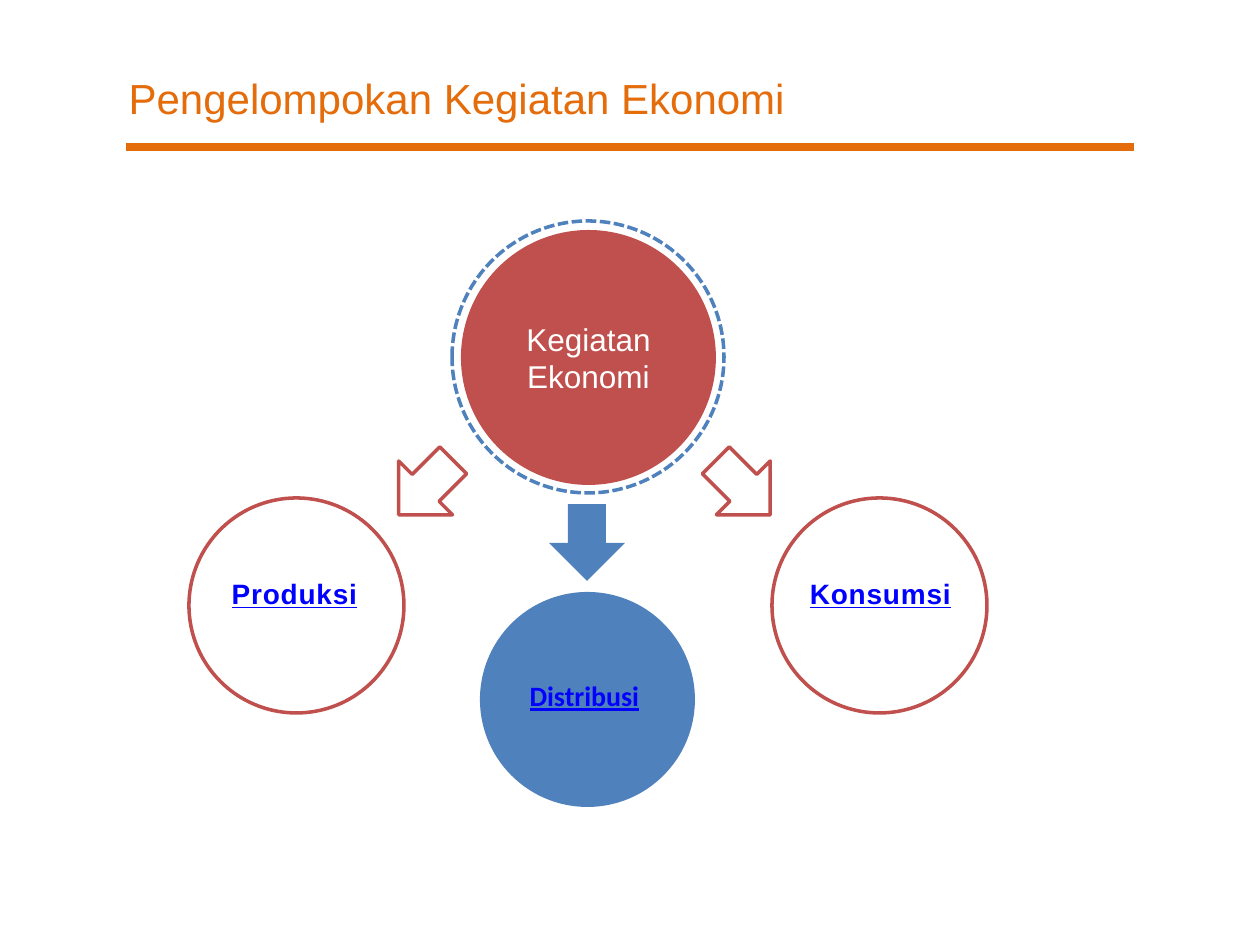
from dataclasses import dataclass

from lxml.etree import SubElement
from pptx import Presentation
from pptx.dml.color import RGBColor
from pptx.enum.dml import MSO_LINE
from pptx.enum.shapes import MSO_CONNECTOR, MSO_SHAPE
from pptx.enum.text import MSO_ANCHOR as ANCHOR, MSO_AUTO_SIZE as AUTO, PP_ALIGN as ALIGN
from pptx.oxml.ns import qn
from pptx.util import Emu, Pt


@dataclass(frozen=True)
class Theme:
    orange: str = "E46C0A"
    red: str = "C0504D"
    blue: str = "4F81BD"
    link: str = "0000FF"
    white: str = "FFFFFF"
    font: str = "Arial"
    alt_font: str = "Calibri"
    title: int = 24
    hub: int = 18
    label: int = 16
    outline: float = 2
    rule: float = 4.5


def px(n):
    return Emu(round(n * 914400 / 126))


def rgb(color):
    return RGBColor.from_string(color)


def write(tf, text, *, size, color, font, align=ALIGN.CENTER, anchor=ANCHOR.MIDDLE,
          bold=False, underline=False, spacing=0):
    tf.word_wrap = True
    tf.vertical_anchor = anchor
    p = tf.paragraphs[0]
    p.alignment = align
    r = p.add_run()
    r.text = text
    r.font.name = font
    r.font.size = Pt(size)
    r.font.bold = bold
    r.font.underline = underline
    r.font.color.rgb = rgb(color)
    if spacing:
        r._r.get_or_add_rPr().set("spc", str(round(spacing * 100)))


class Deck:
    def __init__(self, theme):
        self.theme = theme
        self.prs = Presentation()
        self.prs.slide_width, self.prs.slide_height = px(1260), px(945)
        self.s = self.prs.slides.add_slide(self.prs.slide_layouts[5])

    def title(self, text, x, y, w, h):
        sp = self.s.shapes.title
        sp.left, sp.top, sp.width, sp.height = map(px, (x, y, w, h))
        t = self.theme
        write(sp.text_frame, text, size=t.title, color=t.orange, font=t.font, align=ALIGN.LEFT)

    def rule(self, x1, x2, y):
        ln = self.s.shapes.add_connector(MSO_CONNECTOR.STRAIGHT, px(x1), px(y), px(x2), px(y))
        ln.line.color.rgb = rgb(self.theme.orange)
        ln.line.width = Pt(self.theme.rule)
        SubElement(ln._element.spPr, qn("a:effectLst"))

    def shape(self, kind, x, y, w, h, fill=None, line=None, dash=None, rotation=0):
        sp = self.s.shapes.add_shape(kind, px(x), px(y), px(w), px(h))
        sp.shadow.inherit = False
        sp.rotation = rotation
        if fill:
            sp.fill.solid()
            sp.fill.fore_color.rgb = rgb(fill)
        else:
            sp.fill.background()
        if line:
            sp.line.color.rgb = rgb(line)
            sp.line.width = Pt(self.theme.outline)
            if dash:
                sp.line.dash_style = dash
        else:
            sp.line.fill.background()
        return sp

    def circle(self, x, y, d, **style):
        return self.shape(MSO_SHAPE.OVAL, x, y, d, d, **style)

    def arrow(self, x, y, rotation, **style):
        return self.shape(MSO_SHAPE.UP_ARROW, x, y, 76, 77, rotation=rotation, **style)

    def label(self, text, x, y, font, spacing=0):
        sp = self.s.shapes.add_textbox(px(x), px(y), px(203), px(47))
        t = self.theme
        write(sp.text_frame, text, size=t.label, color=t.link, font=font, anchor=ANCHOR.TOP,
              bold=True, underline=True, spacing=spacing)
        sp.text_frame.auto_size = AUTO.SHAPE_TO_FIT_TEXT


def main():
    t = Theme()
    deck = Deck(t)
    solid = {"fill": t.blue}
    outlined = {"fill": t.white, "line": t.red}

    deck.title("Pengelompokan Kegiatan Ekonomi", 116, 38, 1029, 120)
    deck.rule(126, 1134, 147)

    for x, y, style in ((480, 592, solid), (189, 498, outlined), (772, 498, outlined)):
        deck.circle(x, y, 215, **style)

    deck.circle(452, 221, 272, line=t.blue, dash=MSO_LINE.SQUARE_DOT)
    hub = deck.circle(461, 230, 255, fill=t.red)
    write(hub.text_frame, "Kegiatan Ekonomi", size=t.hub, color=t.white, font=t.font)

    for x, y, rotation, style in ((549, 504, 180, solid), (388, 449, 225, outlined),
                                  (705, 449, 135, outlined)):
        deck.arrow(x, y, rotation, **style)

    deck.label("Distribusi", 483, 672, t.alt_font)
    deck.label("Produksi", 193, 570, t.font, spacing=0.5)
    deck.label("Konsumsi", 779, 570, t.font, spacing=0.5)

    deck.prs.save("out.pptx")


if __name__ == "__main__":
    main()
